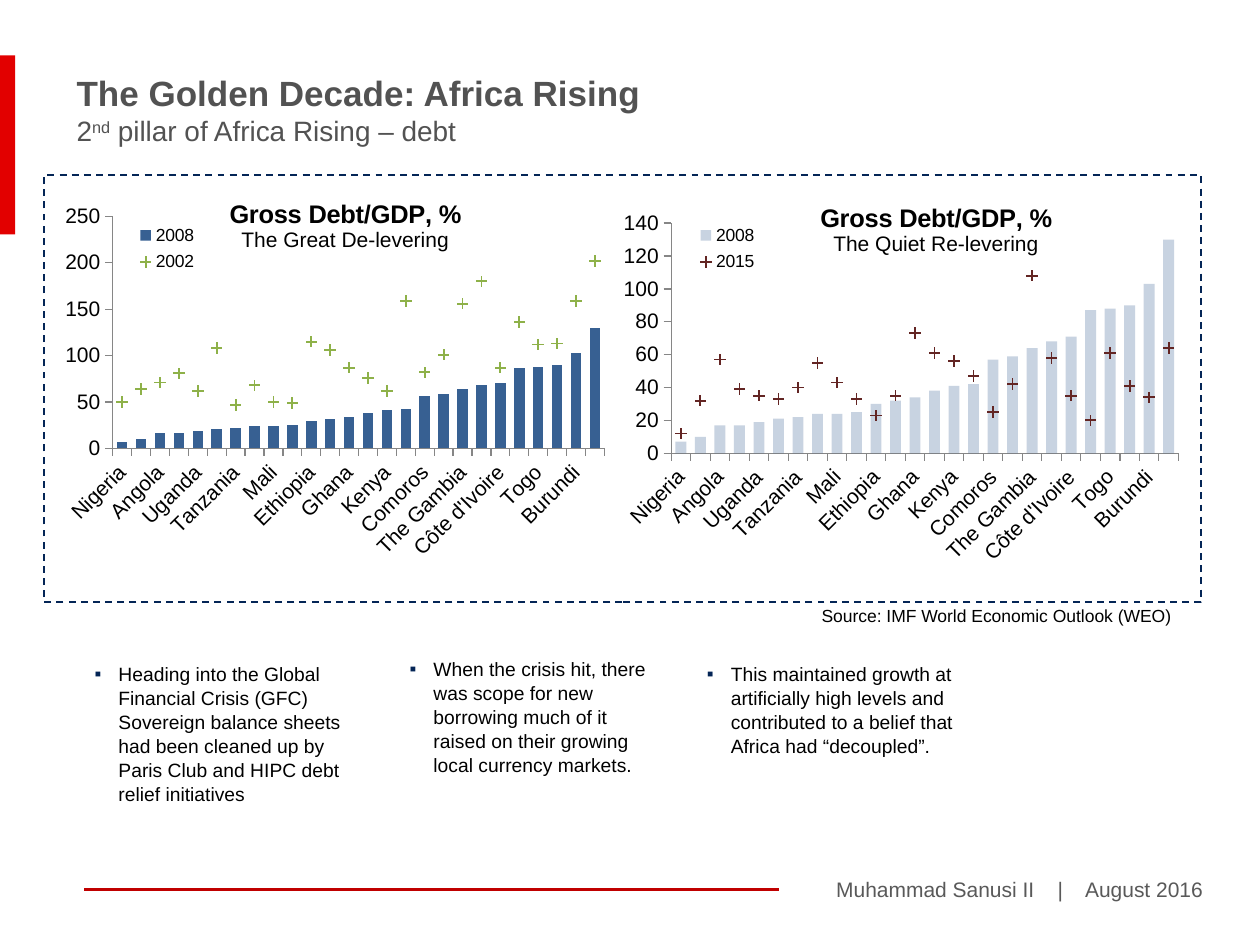
from lxml import etree
from pptx import Presentation
from pptx import util as u
from pptx.chart.data import CategoryChartData
from pptx.dml.color import RGBColor
from pptx.enum import chart as charts, dml, shapes, text
from pptx.oxml import ns

COLORS = {
    "red": "E20000", "rule": "C00000", "navy": "042556", "heading": "525252",
    "footer": "595959", "black": "000000", "bar": "376092", "axis": "868686",
    "green": "8EB149", "maroon": "632523",
}
FONT = "Arial"

COUNTRIES = [
    "Nigeria", "Cameroon", "Angola", "Gabon", "Uganda", "Rwanda", "Tanzania",
    "Senegal", "Mali", "Burkina Faso", "Ethiopia", "Madagascar", "Ghana",
    "Mozambique", "Kenya", "Sierra Leone", "Comoros", "CAR", "The Gambia",
    "Rep Congo", "Côte d'Ivoire", "DR Congo", "Togo", "Guinea", "Burundi",
    "Seychelles",
]
DEBT_2008 = [7, 10, 17, 17, 19, 21, 22, 24, 24, 25, 30, 32, 34, 38, 41, 42, 57,
             59, 64, 68, 71, 87, 88, 90, 103, 130]
DEBT_2002 = [50, 64, 71, 81, 62, 108, 47, 68, 50, 49, 115, 106, 87, 76, 62, 159,
             82, 101, 156, 180, 87, 136, 112, 113, 159, 202]
DEBT_2015 = [12, 32, 57, 39, 35, 33, 40, 55, 43, 33, 23, 35, 73, 61, 56, 47, 25,
             42, 108, 58, 35, 20, 61, 41, 34, 64]

CHARTS = [
    {"box": (0.51, 1.39, 4.42, 3.15), "subtitle": "The Great De-levering",
     "compare": ("2002", DEBT_2002), "marker": "green", "alpha": 100,
     "maximum": 250, "step": 50, "plot": (0.087, 0.104, 0.883, 0.585),
     "title": (0.29, 0.05), "legend": (0.11, 0.11, 0.15, 0.15)},
    {"box": (4.93, 1.39, 4.56, 3.15), "subtitle": "The Quiet Re-levering",
     "compare": ("2015", DEBT_2015), "marker": "maroon", "alpha": 27,
     "maximum": 140, "step": 20, "plot": (0.087, 0.121, 0.883, 0.58),
     "title": (0.34, 0.06), "legend": (0.11, 0.11, 0.15, 0.15)},
]

BULLETS = [
    (0.75, 5.25, "Heading into the Global Financial Crisis (GFC) Sovereign balance "
     "sheets had been cleaned up by Paris Club and HIPC debt relief initiatives"),
    (3.25, 5.21, "When the crisis hit, there was scope for new borrowing much of it "
     "raised on their growing local currency markets."),
    (5.61, 5.25, "This maintained growth at artificially high levels and contributed "
     "to a belief that Africa had “decoupled”."),
]


def rgb(name):
    return RGBColor.from_string(COLORS[name])


def inches(values):
    return [u.Inches(value) for value in values]


def set_all(target, **values):
    for name, value in values.items():
        setattr(target, name, value)


def sub(parent, tag, **attributes):
    return etree.SubElement(parent, ns.qn(tag), attributes)


def set_font(font, size, color="black", bold=False):
    set_all(font, name=FONT, size=u.Pt(size), bold=bold)
    font.color.rgb = rgb(color)


def add_run(paragraph, words, size, color="black", bold=False):
    run = paragraph.add_run()
    run.text = words
    set_font(run.font, size, color, bold)
    return run


def add_text_box(slide, box, margins=(0.1, 0.05, 0.1, 0.05)):
    frame = slide.shapes.add_textbox(*inches(box)).text_frame
    sides = ("margin_left", "margin_top", "margin_right", "margin_bottom")
    set_all(frame, word_wrap=True, **dict(zip(sides, inches(margins))))
    return frame


def add_rectangle(slide, box, fill=None, line=None):
    shape = slide.shapes.add_shape(shapes.MSO_SHAPE.RECTANGLE, *inches(box))
    shape.shadow.inherit = False
    if fill:
        shape.fill.solid()
        shape.fill.fore_color.rgb = rgb(fill)
    else:
        shape.fill.background()
    if line:
        shape.line.color.rgb = rgb(line)
        set_all(shape.line, width=u.Pt(1), dash_style=dml.MSO_LINE.DASH)
    else:
        shape.line.fill.background()


def add_line(slide, start, end, color):
    line = slide.shapes.add_connector(
        shapes.MSO_CONNECTOR.STRAIGHT, *inches(start + end))
    line.line.color.rgb = rgb(color)
    line.line.width = u.Pt(1.5)
    sub(line._element.spPr, "a:effectLst")


def add_bullet(slide, left, top, words):
    paragraph = add_text_box(slide, (left, top, 1.99, 1.46), (0,) * 4).paragraphs[0]
    paragraph.line_spacing = 1.04
    add_run(paragraph, words, 11)
    properties = paragraph._p.get_or_add_pPr()
    set_indent = {"marL": u.Inches(0.19), "indent": u.Inches(-0.19)}
    for name, value in set_indent.items():
        properties.set(name, str(value))
    sub(sub(properties, "a:buClr"), "a:srgbClr", val=COLORS["navy"])
    sub(properties, "a:buFont", typeface=FONT)
    sub(properties, "a:buChar", char="▪")


def place(element, index, fractions, inner=False):
    """Give a chart part a manual layout in fractions of the chart."""
    for old in element.findall(ns.qn("c:layout")):
        element.remove(old)
    layout = etree.Element(ns.qn("c:layout"))
    element.insert(index, layout)
    manual = sub(layout, "c:manualLayout")
    if inner:
        sub(manual, "c:layoutTarget", val="inner")
    for name in ("xMode", "yMode"):
        sub(manual, "c:" + name, val="edge")
    for name, value in zip("xywh", fractions):
        sub(manual, "c:" + name, val=str(value))


def move_last_series_to_line(chart):
    bars = chart.plots[0]._element
    series = bars.findall(ns.qn("c:ser"))[-1]
    for extra in series.findall(ns.qn("c:invertIfNegative")):
        series.remove(extra)
    line = etree.Element(ns.qn("c:lineChart"))
    bars.addnext(line)
    sub(line, "c:grouping", val="standard")
    sub(line, "c:varyColors", val="0")
    line.append(series)
    sub(line, "c:marker", val="1")
    for axis in bars.findall(ns.qn("c:axId")):
        sub(line, "c:axId", val=axis.get("val"))


def format_axis(axis):
    set_all(axis, has_major_gridlines=False,
            major_tick_mark=charts.XL_TICK_MARK.OUTSIDE,
            minor_tick_mark=charts.XL_TICK_MARK.NONE)
    axis.format.line.color.rgb = rgb("axis")
    set_font(axis.tick_labels.font, 12)


def add_debt_chart(slide, settings):
    data = CategoryChartData(number_format="0")
    data.categories = COUNTRIES
    data.add_series("2008", DEBT_2008)
    data.add_series(*settings["compare"])
    chart = slide.shapes.add_chart(
        charts.XL_CHART_TYPE.COLUMN_STACKED, *inches(settings["box"]), data).chart
    set_font(chart.font, 10)
    move_last_series_to_line(chart)

    # Columns and plus markers
    columns, markers = chart.plots
    set_all(columns, gap_width=79, overlap=100, vary_by_categories=False)
    fill = columns.series[0].format.fill
    fill.solid()
    fill.fore_color.rgb = rgb("bar")
    if settings["alpha"] < 100:
        color = columns.series[0]._element.find(".//" + ns.qn("a:srgbClr"))
        sub(color, "a:alpha", val=str(settings["alpha"] * 1000))
    series = markers.series[0]
    series.smooth = False
    series.format.line.fill.background()
    set_all(series.marker, style=charts.XL_MARKER_STYLE.PLUS, size=6)
    series.marker.format.fill.solid()
    series.marker.format.fill.fore_color.rgb = rgb(settings["marker"])
    series.marker.format.line.color.rgb = rgb(settings["marker"])

    # Axes
    for axis in (chart.category_axis, chart.value_axis):
        format_axis(axis)
    set_all(chart.value_axis, minimum_scale=0, maximum_scale=settings["maximum"],
            major_unit=settings["step"])
    labels = chart.category_axis._element.find(ns.qn("c:txPr"))
    labels.find(ns.qn("a:bodyPr")).set("rot", str(-45 * 60000))
    skip = etree.Element(ns.qn("c:tickLblSkip"), val="2")
    chart.category_axis._element.find(ns.qn("c:noMultiLvlLbl")).addprevious(skip)

    # Title, legend and plot area
    frame = chart.chart_title.text_frame
    add_run(frame.paragraphs[0], "Gross Debt/GDP, %", 14.5, bold=True)
    add_run(frame.add_paragraph(), settings["subtitle"], 12)
    title = chart.chart_title._element
    title.find(ns.qn("c:overlay")).set("val", "1")
    place(title, 1, settings["title"])
    chart.has_legend = True
    set_all(chart.legend, position=charts.XL_LEGEND_POSITION.RIGHT,
            include_in_layout=True)
    place(chart.legend._element, 1, settings["legend"])
    place(columns._element.getparent(), 0, settings["plot"], inner=True)


def main():
    presentation = Presentation()
    set_all(presentation, slide_width=u.Inches(10), slide_height=u.Inches(7.5))
    slide = presentation.slides.add_slide(presentation.slide_layouts[6])

    # Footer and side accent
    footer = add_text_box(slide, (5.63, 6.91, 4.02, 0.3)).paragraphs[0]
    footer.alignment = text.PP_ALIGN.RIGHT
    add_run(footer, "Muhammad Sanusi II    |    August 2016", 12, "footer")
    add_line(slide, (0.67, 7.06), (6.18, 7.06), "rule")
    add_rectangle(slide, (0, 0.44, 0.12, 1.42), fill="red")

    # Heading
    heading = add_text_box(slide, (0.51, 0.52, 8.66, 0.71))
    add_run(heading.paragraphs[0], "The Golden Decade: Africa Rising", 20,
            "heading", True)
    subtitle = heading.add_paragraph()
    add_run(subtitle, "2", 16, "heading")
    ordinal = add_run(subtitle, "nd", 16, "heading")
    ordinal.font._element.set("baseline", "30000")
    add_run(subtitle, " pillar of Africa Rising – debt", 16, "heading")

    # Charts, bullets, frame and source
    for settings in CHARTS:
        add_debt_chart(slide, settings)
    for bullet in BULLETS:
        add_bullet(slide, *bullet)
    add_rectangle(slide, (0.35, 1.39, 9.18, 3.39), line="navy")
    source = add_text_box(slide, (6.45, 4.77, 3.09, 0.24), (0.07, 0.03, 0.07, 0.04))
    add_run(source.paragraphs[0], "Source: IMF World Economic Outlook (WEO)", 10)

    presentation.save("out.pptx")


if __name__ == "__main__":
    main()
